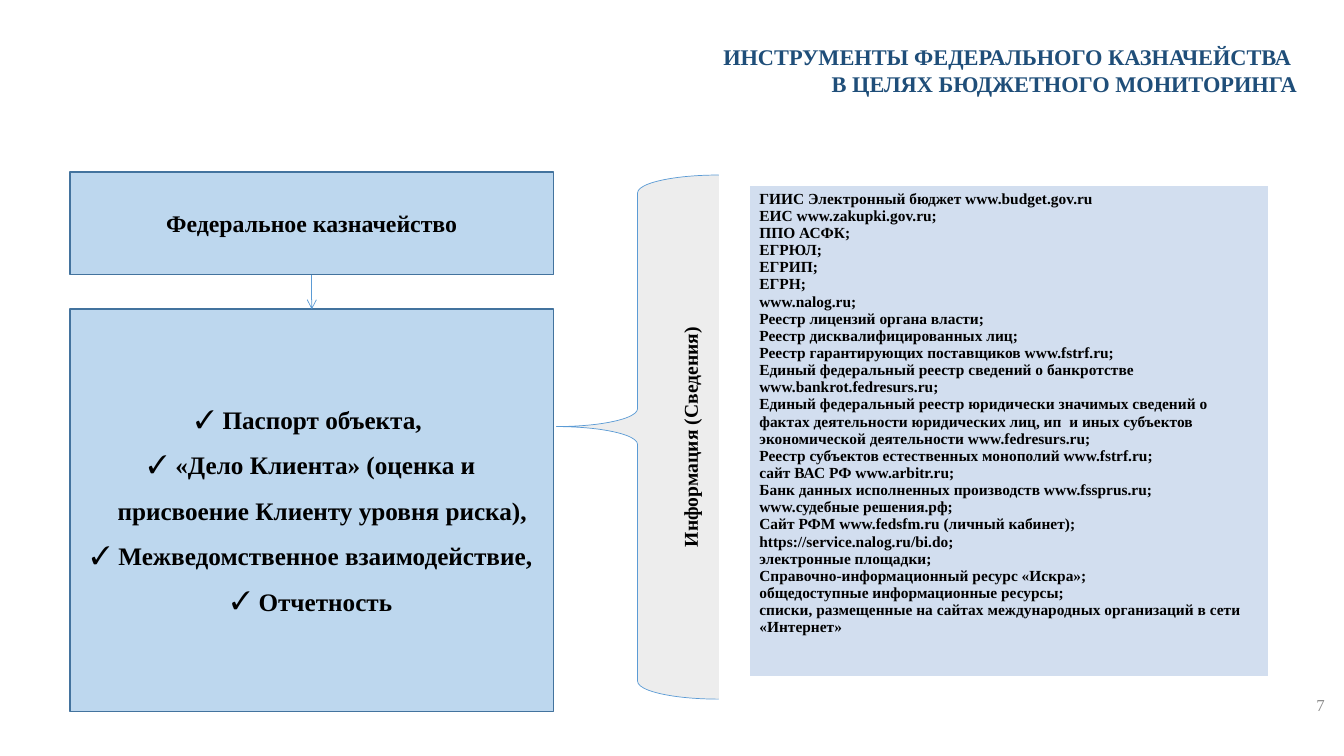
from dataclasses import dataclass
from typing import Any

from lxml.etree import SubElement
from pptx import Presentation
from pptx.dml.color import RGBColor
from pptx.enum.shapes import MSO_CONNECTOR as Connector, MSO_SHAPE as Preset
from pptx.enum.text import MSO_ANCHOR as Anchor, PP_ALIGN as Align
from pptx.oxml.ns import qn
from pptx.util import Emu, Inches, Pt

SLIDE_W, SLIDE_H = Inches(13.333), Inches(7.5)


@dataclass(frozen=True)
class Theme:
    font: str = "Times New Roman"
    title: str = "1F4E79"
    ink: str = "000000"
    muted: str = "8C8C8C"
    box: str = "BDD7EE"
    box_line: str = "43739E"
    brace: str = "EDEDED"
    accent: str = "5B9BD5"
    sources: str = "D2DEEF"
    border: str = "FFFFFF"
    title_size: float = 16
    agency_size: float = 17
    tools_size: float = 18
    brace_size: float = 14
    sources_size: float = 11
    number_size: float = 12


@dataclass(frozen=True)
class Area:
    """Position and size in percent of the slide."""
    x: float
    y: float
    w: float
    h: float

    def emu(self) -> tuple[Emu, Emu, Emu, Emu]:
        return (Emu(int(SLIDE_W * self.x / 100)), Emu(int(SLIDE_H * self.y / 100)),
                Emu(int(SLIDE_W * self.w / 100)), Emu(int(SLIDE_H * self.h / 100)))


@dataclass(frozen=True)
class Panel:
    area: Area
    preset: Preset
    fill: str
    line: str
    line_width: float
    lines: tuple[str, ...]
    size: float
    bullet: str = ""


THEME = Theme()

TITLE = ("ИНСТРУМЕНТЫ ФЕДЕРАЛЬНОГО КАЗНАЧЕЙСТВА ", "В ЦЕЛЯХ БЮДЖЕТНОГО МОНИТОРИНГА")
TITLE_AREA = Area(2.75, 5, 94.5, 8.27)
SOURCES_AREA = Area(55.75, 24.53, 38.63, 64.93)
NUMBER_AREA = Area(96.38, 90.53, 2.93, 5.33)

AGENCY = Panel(Area(5.2, 22.75, 36, 13.6), Preset.RECTANGLE, THEME.box, THEME.box_line, 1,
               ("Федеральное казначейство",), THEME.agency_size)
TOOLS = Panel(Area(5.2, 40.9, 36, 53.2), Preset.RECTANGLE, THEME.box, THEME.box_line, 1,
              ("Паспорт объекта, ",
               "«Дело Клиента» (оценка и присвоение Клиенту уровня риска), ",
               "Межведомственное взаимодействие,",
               "Отчетность"), THEME.tools_size, "✓")
INFORMATION = Panel(Area(41.4, 23.15, 12.08, 69.33), Preset.LEFT_BRACE, THEME.brace,
                    THEME.accent, 0.5, ("Информация (Сведения)",), THEME.brace_size)

SOURCES = (
    "ГИИС Электронный бюджет www.budget.gov.ru",
    "ЕИС www.zakupki.gov.ru;",
    "ППО АСФК;",
    "ЕГРЮЛ;",
    "ЕГРИП;",
    "ЕГРН;",
    "www.nalog.ru;",
    "Реестр лицензий органа власти;",
    "Реестр дисквалифицированных лиц;",
    "Реестр гарантирующих поставщиков www.fstrf.ru;",
    "Единый федеральный реестр сведений о банкротстве www.bankrot.fedresurs.ru;",
    "Единый федеральный реестр юридически значимых сведений о фактах деятельности "
    "юридических лиц, ип  и иных субъектов экономической деятельности www.fedresurs.ru;",
    "Реестр субъектов естественных монополий www.fstrf.ru;",
    "сайт ВАС РФ www.arbitr.ru;",
    "Банк данных исполненных производств www.fssprus.ru;",
    "www.судебные решения.рф;",
    "Сайт РФМ www.fedsfm.ru (личный кабинет);",
    "https://service.nalog.ru/bi.do;",
    "электронные площадки;",
    "Справочно-информационный ресурс «Искра»;",
    "общедоступные информационные ресурсы;",
    "списки, размещенные на сайтах международных организаций в сети «Интернет»",
)


def write(frame: Any, lines: tuple[str, ...], size: float, color: str, align: Align,
          bold: bool = True, bullet: str = "") -> None:
    frame.word_wrap = True
    for index, line in enumerate(lines):
        paragraph = frame.add_paragraph() if index else frame.paragraphs[0]
        paragraph.alignment = align
        if bullet:
            paragraph.line_spacing = 1.5
            props = paragraph._p.get_or_add_pPr()
            props.set("marL", str(Inches(0.27)))
            props.set("indent", str(-Inches(0.27)))
            SubElement(props, qn("a:buFont")).set("typeface", THEME.font)
            SubElement(props, qn("a:buChar")).set("char", bullet)
        run = paragraph.add_run()
        run.text = line
        run.font.name, run.font.size, run.font.bold = THEME.font, Pt(size), bold
        run.font.color.rgb = RGBColor.from_string(color)


def add_panel(slide: Any, panel: Panel) -> Any:
    shape = slide.shapes.add_shape(panel.preset, *panel.area.emu())
    shape.shadow.inherit = False
    shape.fill.solid()
    shape.fill.fore_color.rgb = RGBColor.from_string(panel.fill)
    shape.line.color.rgb = RGBColor.from_string(panel.line)
    shape.line.width = Pt(panel.line_width)
    shape.text_frame.vertical_anchor = Anchor.MIDDLE
    write(shape.text_frame, panel.lines, panel.size, THEME.ink, Align.CENTER,
          bullet=panel.bullet)
    return shape


def add_label(slide: Any, area: Area, lines: tuple[str, ...], size: float, color: str,
              bold: bool, anchor: Anchor) -> None:
    frame = slide.shapes.add_textbox(*area.emu()).text_frame
    frame.vertical_anchor = anchor
    write(frame, lines, size, color, Align.RIGHT, bold)


def add_arrow(slide: Any, upper: Any, lower: Any) -> None:
    arrow = slide.shapes.add_connector(Connector.STRAIGHT, 0, 0, 0, 0)
    arrow.begin_connect(upper, 2)
    arrow.end_connect(lower, 0)
    arrow.line.color.rgb = RGBColor.from_string(THEME.accent)
    arrow.line.width = Pt(0.5)
    SubElement(arrow.line._get_or_add_ln(), qn("a:tailEnd")).set("type", "arrow")
    SubElement(arrow._element.spPr, qn("a:effectLst"))


def add_sources(slide: Any) -> None:
    table = slide.shapes.add_table(1, 1, *SOURCES_AREA.emu()).table
    table.first_row = table.horz_banding = False
    cell = table.cell(0, 0)
    write(cell.text_frame, SOURCES, THEME.sources_size, THEME.ink, Align.LEFT)
    props = cell._tc.get_or_add_tcPr()
    for side in ("a:lnL", "a:lnR", "a:lnT", "a:lnB"):
        border = SubElement(props, qn(side), w=str(Pt(1)))
        SubElement(SubElement(border, qn("a:solidFill")), qn("a:srgbClr"), val=THEME.border)
    cell.fill.solid()
    cell.fill.fore_color.rgb = RGBColor.from_string(THEME.sources)


def main() -> None:
    deck = Presentation()
    deck.slide_width, deck.slide_height = SLIDE_W, SLIDE_H
    slide = deck.slides.add_slide(deck.slide_layouts[6])

    # Heading
    add_label(slide, TITLE_AREA, TITLE, THEME.title_size, THEME.title, True, Anchor.TOP)

    # Agency and its tools
    agency = add_panel(slide, AGENCY)
    tools = add_panel(slide, TOOLS)
    tools.text_frame.margin_bottom = Inches(0.2)
    add_arrow(slide, agency, tools)

    # Brace with upright caption
    information = add_panel(slide, INFORMATION)
    information.adjustments[0], information.adjustments[1] = 0.11, 0.48
    information.text_frame._txBody.bodyPr.set("vert", "vert270")

    # Information sources and slide number
    add_sources(slide)
    add_label(slide, NUMBER_AREA, ("7",), THEME.number_size, THEME.muted, False, Anchor.MIDDLE)

    deck.save("out.pptx")


if __name__ == "__main__":
    main()
